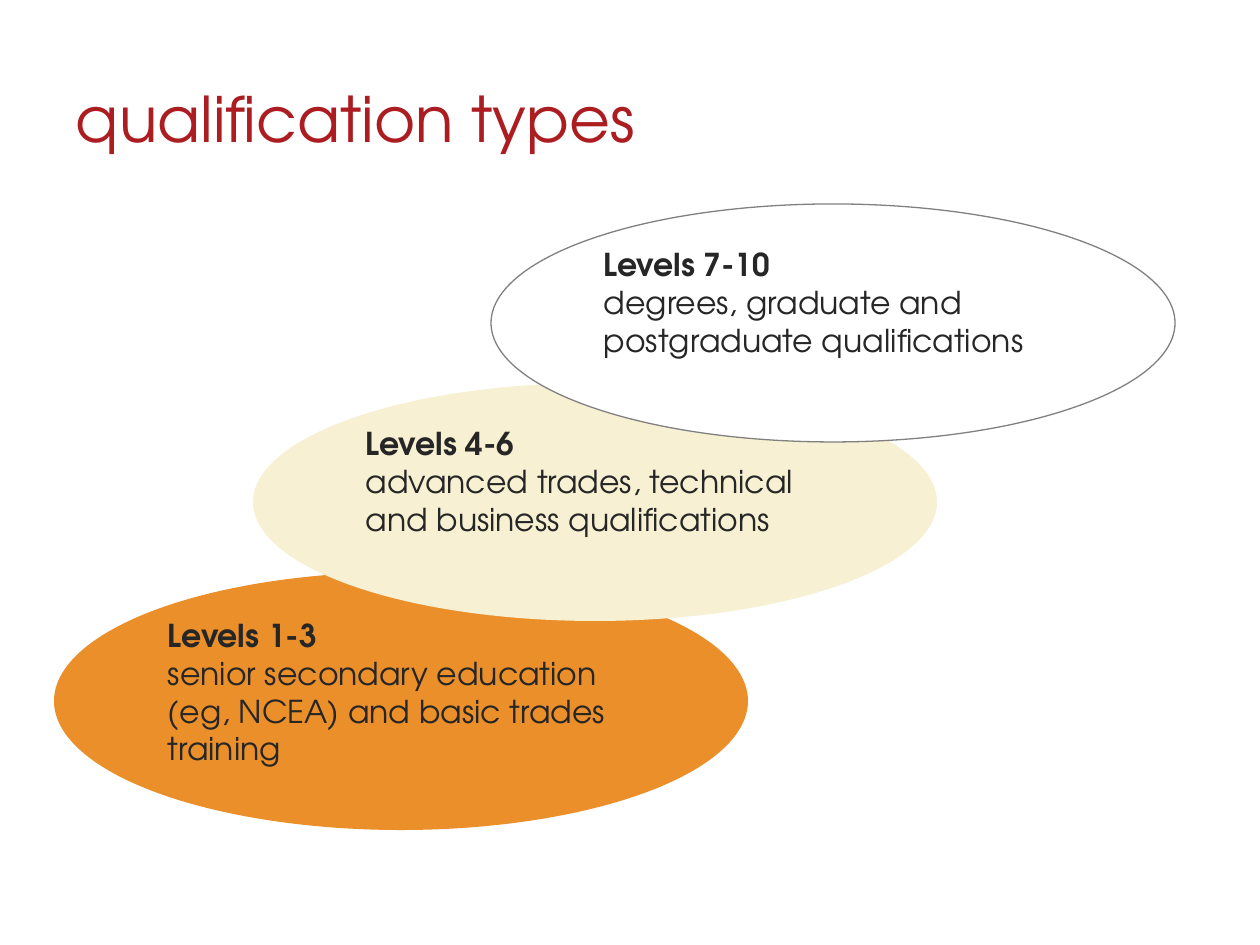
from pptx import Presentation
from pptx import util as u
from pptx.dml.color import RGBColor
from pptx.enum import shapes, text

TITLE = "qualification types"
TITLE_BOX = (63, 38, 1113, 158)
LEVELS = [
    ("Levels 1-3", "senior secondary education (eg, NCEA) and basic trades training",
     "orange", None, (54, 572, 694, 258)),
    ("Levels 4-6", "advanced trades, technical and business qualifications",
     "cream", None, (253, 383, 684, 238)),
    ("Levels 7-10", "degrees, graduate and postgraduate qualifications",
     "white", "grey", (491, 204, 684, 238)),
]
THEME = {
    "font": "TeX Gyre Adventor",
    "sizes": {"title": 36, "body": 18},
    "colors": {"red": "AC1D22", "ink": "262626", "orange": "EB8F2B",
               "cream": "F7F0D3", "white": "FFFFFF", "grey": "808080"},
}
PX = u.Inches(1) / 126


def emu(pixels):
    return u.Emu(round(pixels * PX))


def color(name):
    return RGBColor.from_string(THEME["colors"][name])


def apply(target, values):
    for name, value in values.items():
        setattr(target, name, value)


def write(paragraph, words, size, ink, bold=False):
    paragraph.alignment = text.PP_ALIGN.LEFT
    run = paragraph.add_run()
    run.text = words
    apply(run.font, {"name": THEME["font"], "size": u.Pt(THEME["sizes"][size]), "bold": bold})
    run.font.color.rgb = color(ink)


def add_title(slide):
    title = slide.shapes.title
    apply(title, dict(zip(("left", "top", "width", "height"), map(emu, TITLE_BOX))))
    apply(title.text_frame, {"word_wrap": True, "vertical_anchor": text.MSO_ANCHOR.MIDDLE})
    write(title.text_frame.paragraphs[0], TITLE, "title", "red")


def add_level(slide, heading, detail, fill, outline, box):
    ellipse = slide.shapes.add_shape(shapes.MSO_SHAPE.OVAL, *map(emu, box))
    ellipse.shadow.inherit = False
    ellipse.fill.solid()
    ellipse.fill.fore_color.rgb = color(fill)
    if outline:
        ellipse.line.color.rgb = color(outline)
        ellipse.line.width = u.Pt(0.75)
    else:
        ellipse.line.fill.background()
    frame = ellipse.text_frame
    apply(frame, {"word_wrap": True, "vertical_anchor": text.MSO_ANCHOR.TOP})
    write(frame.paragraphs[0], heading, "body", "ink", bold=True)
    write(frame.add_paragraph(), detail, "body", "ink")


def main():
    presentation = Presentation()
    apply(presentation, {"slide_width": emu(1260), "slide_height": emu(945)})
    slide = presentation.slides.add_slide(presentation.slide_layouts.get_by_name("Title Only"))
    add_title(slide)
    for level in LEVELS:
        add_level(slide, *level)
    presentation.save("out.pptx")


if __name__ == "__main__":
    main()
